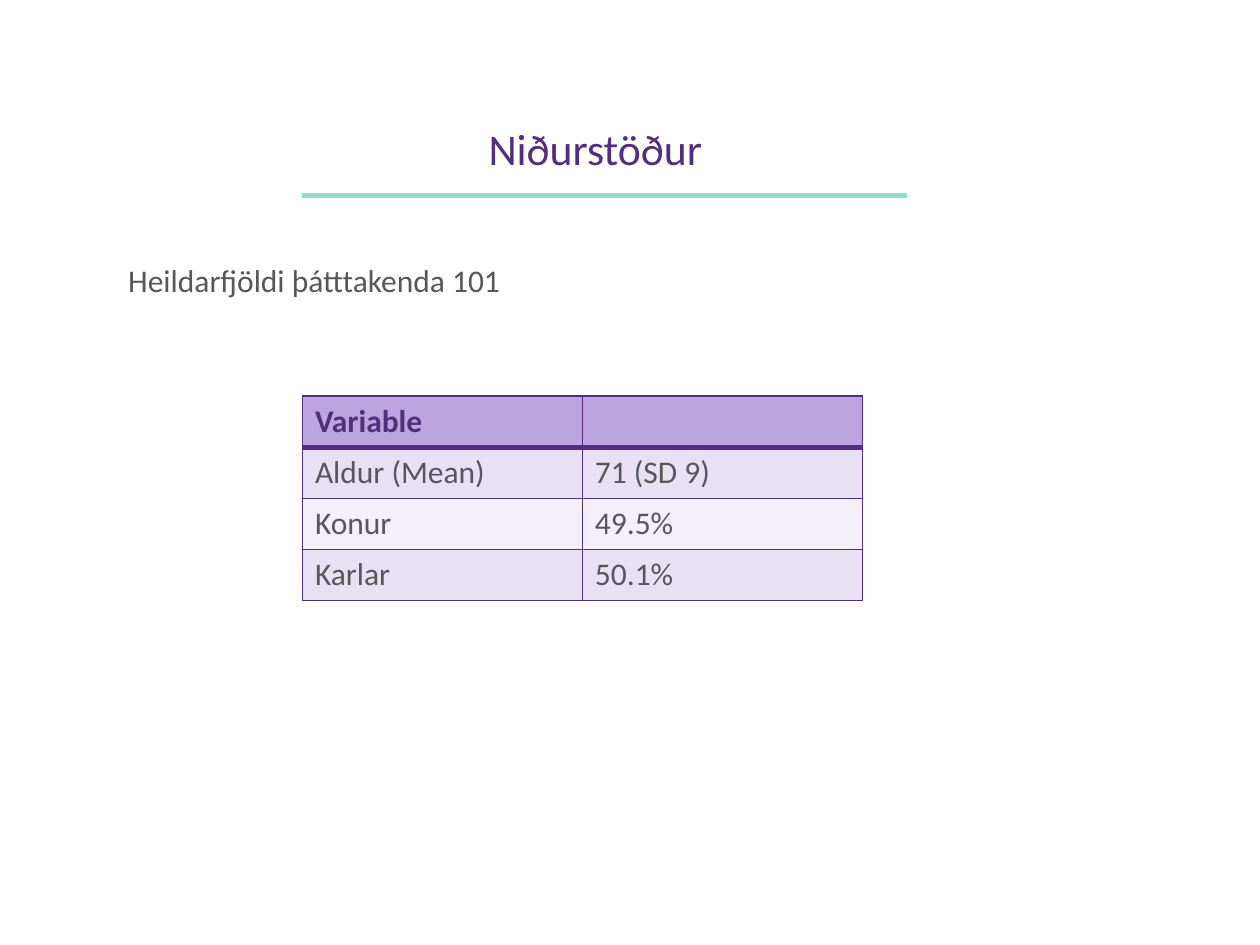
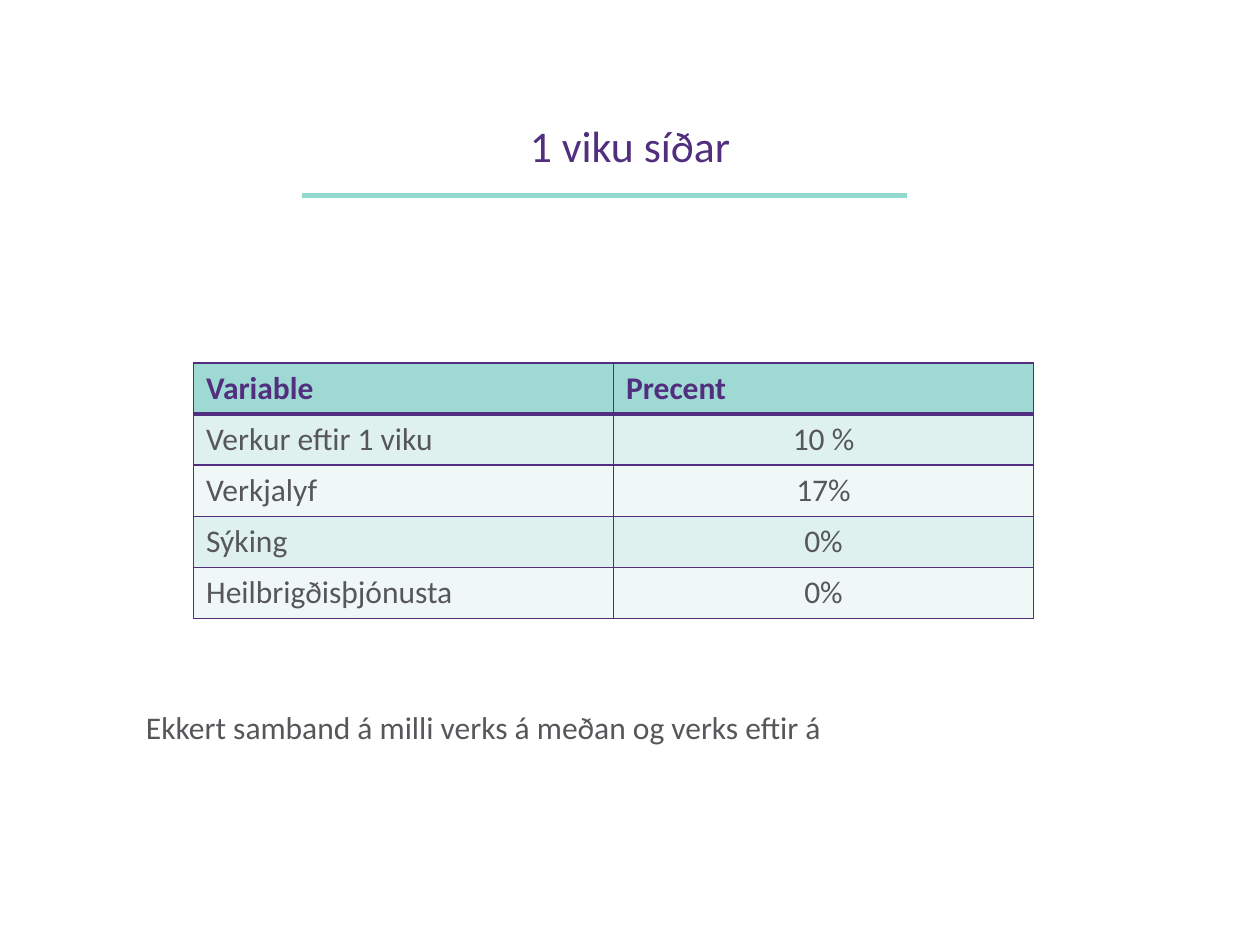
from dataclasses import dataclass

from lxml import etree
from pptx import Presentation
from pptx import util as u
from pptx.dml.color import RGBColor
from pptx.enum import shapes, text
from pptx.oxml.ns import qn

Pt = u.Pt
FONT = "Calibri"
TITLE_SIZE, BODY_SIZE = 25, 18
THIN, THICK = 1, 3
COLORS = {
    "purple": "512E7E", "grey": "56565B", "rule": "92D9CE",
    "violet_head": "BBA5DF", "violet_dark": "E7E1F3", "violet_light": "F3F0F9",
    "mint_head": "9EDAD3", "mint_dark": "DFF1EF", "mint_light": "F0F8F7",
}
LEFT, CENTER = text.PP_ALIGN.LEFT, text.PP_ALIGN.CENTER


@dataclass(frozen=True)
class Area:
    left: float
    top: float
    width: float
    height: float

    def points(self) -> tuple:
        return Pt(self.left), Pt(self.top), Pt(self.width), Pt(self.height)


@dataclass(frozen=True)
class Label:
    words: str
    area: Area


@dataclass(frozen=True)
class ResultTable:
    area: Area
    rows: tuple
    palette: str
    value_align: text.PP_ALIGN


@dataclass(frozen=True)
class ResultSlide:
    title: Label
    table: ResultTable
    note: Label


def color(name: str) -> RGBColor:
    return RGBColor.from_string(COLORS[name])


def write(frame, words: str, size: float, ink: str, align=LEFT, bold=False) -> None:
    para = frame.paragraphs[0]
    para.text = words
    para.alignment = align
    font = para.font
    font.name, font.size, font.bold = FONT, Pt(size), bold
    font.color.rgb = color(ink)


def add_label(page, label: Label, size: float, ink: str, align=LEFT,
              anchor=text.MSO_ANCHOR.TOP) -> None:
    frame = page.shapes.add_textbox(*label.area.points()).text_frame
    frame.word_wrap = True
    frame.vertical_anchor = anchor
    write(frame, label.words, size, ink, align)


def add_title_rule(page) -> None:
    line = page.shapes.add_connector(
        shapes.MSO_CONNECTOR.STRAIGHT, Pt(172.8), Pt(111.6), Pt(518.4), Pt(111.6))
    line.line.color.rgb = color("rule")
    line.line.width = Pt(3)
    etree.SubElement(line._element.spPr, qn("a:effectLst"))


def set_borders(cell, top: float, bottom: float) -> None:
    """Add the cell's border lines; call before setting its fill."""
    properties = cell._tc.get_or_add_tcPr()
    for side, width in (("L", THIN), ("R", THIN), ("T", top), ("B", bottom)):
        border = etree.SubElement(properties, qn(f"a:ln{side}"), w=str(Pt(width)))
        fill = etree.SubElement(border, qn("a:solidFill"))
        etree.SubElement(fill, qn("a:srgbClr"), val=COLORS["purple"])


def add_result_table(page, data: ResultTable) -> None:
    table = page.shapes.add_table(
        len(data.rows), len(data.rows[0]), *data.area.points()).table
    table.first_row = table.horz_banding = False
    for row, values in enumerate(data.rows):
        header = row == 0
        shade = "head" if header else ("dark" if row % 2 else "light")
        for column, words in enumerate(values):
            cell = table.cell(row, column)
            set_borders(cell, THICK if row == 1 else THIN, THICK if header else THIN)
            cell.fill.solid()
            cell.fill.fore_color.rgb = color(f"{data.palette}_{shade}")
            align = data.value_align if column and not header else LEFT
            write(cell.text_frame, words, BODY_SIZE,
                  "purple" if header else "grey", align, header)


def add_result_slide(deck, content: ResultSlide) -> None:
    page = deck.slides.add_slide(deck.slide_layouts[6])
    add_label(page, content.title, TITLE_SIZE, "purple", CENTER, text.MSO_ANCHOR.MIDDLE)
    add_title_rule(page)
    add_result_table(page, content.table)
    add_label(page, content.note, BODY_SIZE, "grey")


SLIDES = (
    # Participants
    ResultSlide(
        Label("Niðurstöður", Area(48.2, 39.6, 584, 90)),
        ResultTable(
            Area(172.8, 226.4, 320, 116.8),
            (("Variable", ""), ("Aldur (Mean)", "71 (SD 9)"),
             ("Konur", "49.5%"), ("Karlar", "50.1%")),
            "violet", LEFT),
        Label("Heildarfjöldi þátttakenda 101", Area(66.2, 145.4, 436, 29)),
    ),
    # One week later
    ResultSlide(
        Label("1 viku síðar", Area(36, 49, 648, 67.7)),
        ResultTable(
            Area(110.6, 207.4, 480, 146),
            (("Variable", "Precent"), ("Verkur eftir 1 viku", "10 %"),
             ("Verkjalyf", "17%"), ("Sýking", "0%"), ("Heilbrigðisþjónusta", "0%")),
            "mint", CENTER),
        Label("Ekkert samband á milli verks á meðan og verks eftir á",
              Area(76.3, 400.8, 442, 29)),
    ),
)


def main() -> None:
    deck = Presentation()
    deck.slide_width, deck.slide_height = Pt(720), Pt(540)
    for content in SLIDES:
        add_result_slide(deck, content)
    deck.save("out.pptx")


if __name__ == "__main__":
    main()
